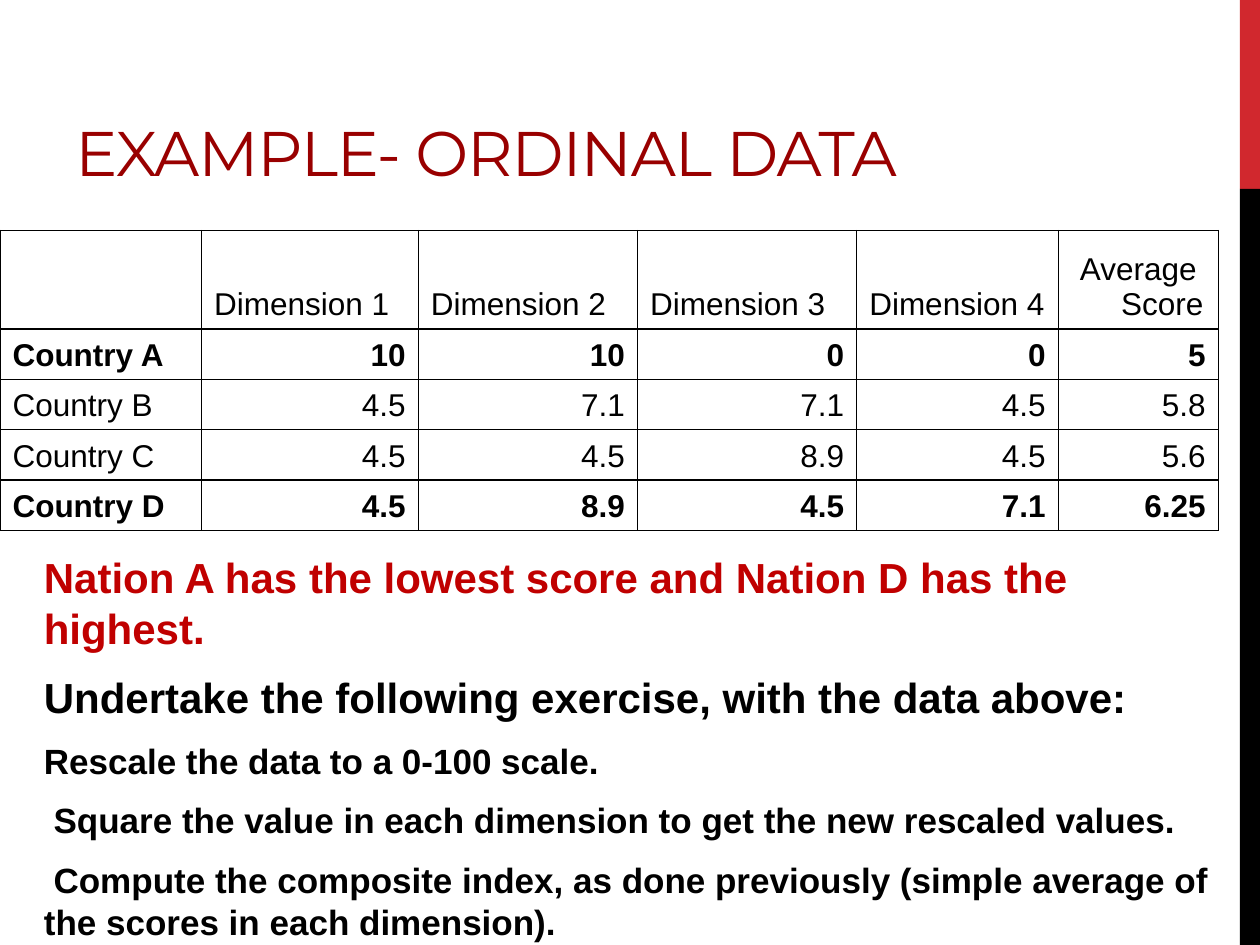
"""Build the ordinal data example slide with its score table and exercise."""
from lxml.etree import SubElement
from pptx import Presentation
from pptx.dml.color import RGBColor
from pptx.enum.shapes import MSO_SHAPE
from pptx.enum.text import MSO_ANCHOR, PP_ALIGN
from pptx.oxml.ns import qn
from pptx.util import Inches, Pt


def color(hex_value):
    return RGBColor.from_string(hex_value)


def add_run(paragraph, text, size, hex_value, bold=False, font="Arial"):
    run = paragraph.add_run()
    run.text = text
    run.font.name = font
    run.font.size = Pt(size)
    run.font.bold = bold
    run.font.color.rgb = color(hex_value)
    return run


presentation = Presentation()
presentation.slide_width = Inches(10)
presentation.slide_height = Inches(7.5)
slide = presentation.slides.add_slide(presentation.slide_layouts[6])

for top, height, fill in [(0, 1.5, "D1282E"), (1.5, 6, "000000")]:
    bar = slide.shapes.add_shape(
        MSO_SHAPE.RECTANGLE, Inches(9.84), Inches(top), Inches(0.16), Inches(height)
    )
    bar.shadow.inherit = False
    bar.fill.solid()
    bar.fill.fore_color.rgb = color(fill)
    bar.line.fill.background()

title = slide.shapes.add_textbox(Inches(0.5), Inches(0.3), Inches(9), Inches(1.25))
title.text_frame.word_wrap = True
title.text_frame.vertical_anchor = MSO_ANCHOR.BOTTOM
title_run = add_run(
    title.text_frame.paragraphs[0], "EXAMPLE- ORDINAL DATA", 36, "990000", font="Montserrat"
)
title_run.font._element.set("spc", "-60")

body = slide.shapes.add_textbox(Inches(0.25), Inches(4.33), Inches(9.5), Inches(3.17))
body.text_frame.word_wrap = True
body_lines = [
    ("Nation A has the lowest score and Nation D has the highest.", 24, "C00000"),
    ("Undertake the following exercise, with the data above:", 24, "000000"),
    ("Rescale the data to a 0-100 scale.", 20, "000000"),
    (" Square the value in each dimension to get the new rescaled values.", 20, "000000"),
    (
        " Compute the composite index, as done previously "
        "(simple average of the scores in each dimension).",
        20,
        "000000",
    ),
]
for index, (text, size, hex_value) in enumerate(body_lines):
    paragraph = body.text_frame.add_paragraph() if index else body.text_frame.paragraphs[0]
    paragraph.space_before = Pt(size * 0.2)
    paragraph.space_after = Pt(6)
    add_run(paragraph, text, size, hex_value, bold=True)

rows = [
    ["", "Dimension 1", "Dimension 2", "Dimension 3", "Dimension 4", "Average\nScore"],
    ["Country A", "10", "10", "0", "0", "5"],
    ["Country B", "4.5", "7.1", "7.1", "4.5", "5.8"],
    ["Country C", "4.5", "4.5", "8.9", "4.5", "5.6"],
    ["Country D", "4.5", "8.9", "4.5", "7.1", "6.25"],
]
bold_rows = (1, 4)
column_widths = [1.6, 1.72, 1.74, 1.74, 1.6, 1.27]
row_heights = [0.78] + [0.39] * 4
table = slide.shapes.add_table(
    len(rows), len(column_widths), Inches(0), Inches(1.83), Inches(9.67), Inches(2.34)
).table
table.first_row = False
table.horz_banding = False
for column, width in zip(table.columns, column_widths):
    column.width = Inches(width)
for row, height in zip(table.rows, row_heights):
    row.height = Inches(height)

for row_index, values in enumerate(rows):
    for column_index, value in enumerate(values):
        cell = table.cell(row_index, column_index)
        cell.vertical_anchor = MSO_ANCHOR.BOTTOM
        properties = cell._tc.get_or_add_tcPr()
        for side in ("a:lnL", "a:lnR", "a:lnT", "a:lnB"):
            border = SubElement(properties, qn(side), w=str(Pt(1)))
            border_fill = SubElement(border, qn("a:solidFill"))
            SubElement(border_fill, qn("a:srgbClr"), val="000000")
        cell.fill.background()

        paragraph = cell.text_frame.paragraphs[0]
        indents = paragraph._p.get_or_add_pPr()
        indents.set("marL", str(Inches(0.38)))
        indents.set("indent", str(Inches(-0.38)))
        if row_index and column_index:
            paragraph.alignment = PP_ALIGN.RIGHT
        elif column_index == len(values) - 1:
            paragraph.alignment = PP_ALIGN.CENTER
        else:
            paragraph.alignment = PP_ALIGN.LEFT
        for line_index, line in enumerate(value.splitlines()):
            if line_index:
                paragraph.add_line_break()
            add_run(paragraph, line, 18, "000000", bold=row_index in bold_rows)

presentation.save("out.pptx")
